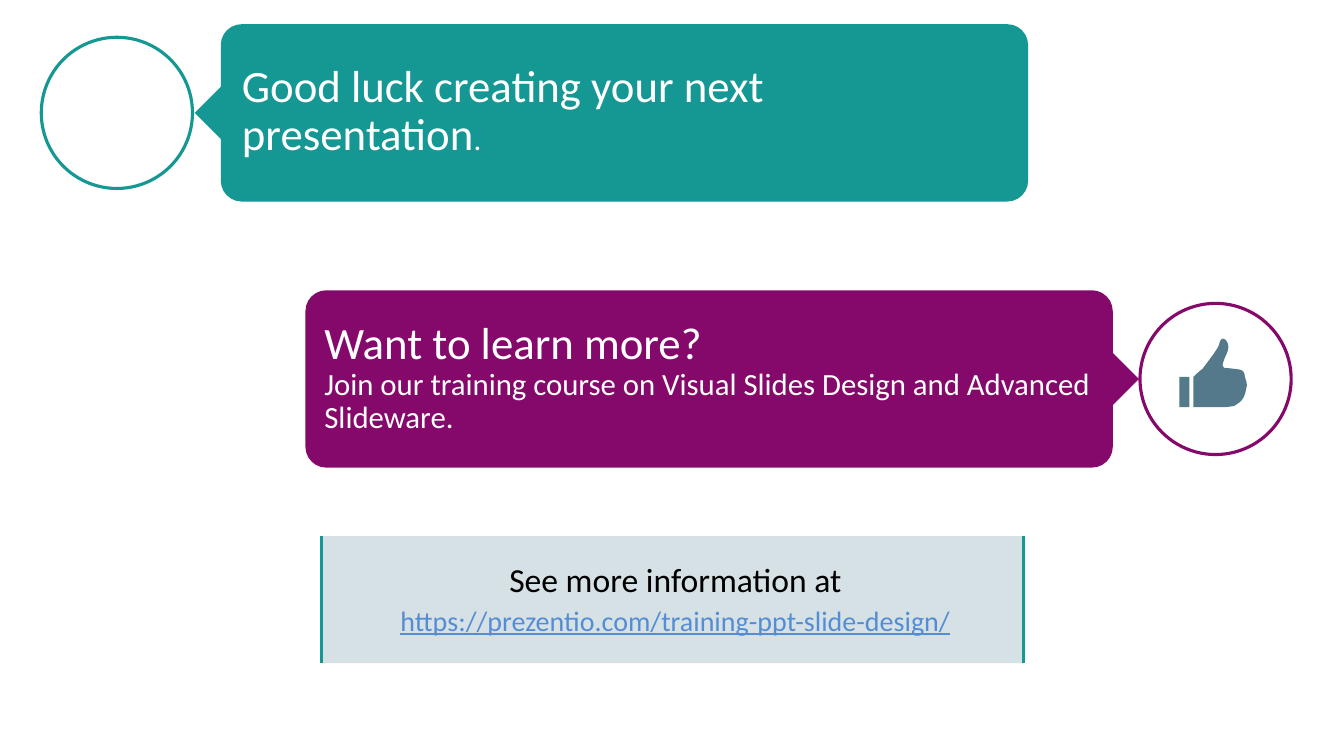
from pptx import Presentation
from pptx.dml.color import RGBColor
from pptx.enum.shapes import MSO_SHAPE
from pptx.enum.text import MSO_ANCHOR, MSO_AUTO_SIZE, PP_ALIGN
from pptx.util import Pt

PX = 9144  # EMU in one px, 100 px to the inch
FONT = "Calibri"
TEAL, PURPLE, WHITE = "159794", "85096A", "FFFFFF"
PANEL, SLATE, BLACK, LINK = "D6E1E6", "54798A", "000000", "548DD4"

ROUNDED, TRIANGLE = MSO_SHAPE.ROUNDED_RECTANGLE, MSO_SHAPE.RIGHT_TRIANGLE
CIRCLE, BRACKETS = MSO_SHAPE.OVAL, MSO_SHAPE.DOUBLE_BRACKET
MIDDLE, NO_FIT = MSO_ANCHOR.MIDDLE, MSO_AUTO_SIZE.NONE
LEFT, CENTER = PP_ALIGN.LEFT, PP_ALIGN.CENTER

# Content: paragraphs are lists of (text, size, colour) runs
GOOD_LUCK = [[("Good luck creating your next presentation", 32, WHITE), (".", 22, WHITE)]]
LEARN_MORE = [
    [("Want to learn more?", 32, WHITE)],
    [("Join our training course on Visual Slides Design and Advanced Slideware.", 22, WHITE)],
]
MORE_INFORMATION = [
    [("See more information at", 24, BLACK)],
    [("https://prezentio.com/training-ppt-slide-design/", 20, LINK)],
]

# Bubbles: colour, left, top, circle left, pointer centre, pointer rotation
TOP_BUBBLE = (TEAL, 219, 24, 41, 220, 45)
LOWER_BUBBLE = (PURPLE, 303, 288, 1131, 1103, 225)
BUBBLE_WIDTH, BUBBLE_HEIGHT = 801, 176
CIRCLE_SIZE, POINTER_SIZE = 150, 38
TEXT_WIDTH, TEXT_HEIGHT = 780, 172

# Thumb icon: each step holds one point for a line or three for a curve
CUFF = [[(1180, 404)], [(1170, 404)], [(1170, 374)], [(1180, 374)]]
HAND = [
    [(1235, 374)],
    [(1235, 371), (1234, 368), (1231, 367)],
    [(1228, 366), (1215, 365), (1215, 365)],
    [(1214, 365), (1213, 363), (1213, 362)],
    [(1213, 361), (1214, 357), (1217, 351)],
    [(1221, 343), (1217, 336), (1213, 336)],
    [(1210, 337), (1210, 341), (1209, 343)],
    [(1209, 345), (1196, 362), (1193, 366)],
    [(1190, 368), (1186, 372), (1184, 374)],
    [(1184, 404)],
    [(1215, 404)],
    [(1224, 403), (1225, 403), (1227, 401)],
    [(1231, 399), (1234, 395), (1235, 391)],
    [(1236, 389), (1236, 386), (1237, 383)],
    [(1237, 379), (1236, 377), (1235, 374)],
]


def color(value):
    return RGBColor.from_string(value)


def paint(shape, fill, line=None):
    shape.shadow.inherit = False
    shape.fill.solid()
    shape.fill.fore_color.rgb = color(fill)
    if line:
        shape.line.color.rgb = color(line)
        shape.line.width = Pt(2.25)
    else:
        shape.line.fill.background()


def add_shape(kind, left, top, width, height, fill, line=None):
    shape = slide.shapes.add_shape(kind, left * PX, top * PX, width * PX, height * PX)
    paint(shape, fill, line)
    return shape


def write(text_frame, paragraphs, alignment=LEFT, line_spacing=None):
    text_frame.word_wrap = True
    text_frame.auto_size = NO_FIT
    text_frame.vertical_anchor = MIDDLE
    for index, runs in enumerate(paragraphs):
        paragraph = text_frame.add_paragraph() if index else text_frame.paragraphs[0]
        paragraph.alignment = alignment
        paragraph.line_spacing = line_spacing
        for text, size, text_color in runs:
            run = paragraph.add_run()
            run.text = text
            run.font.name = FONT
            run.font.size = Pt(size)
            run.font.color.rgb = color(text_color)
            run.font.underline = text_color == LINK


def add_bubble(fill, left, top, circle_left, pointer_center, rotation):
    middle = top + BUBBLE_HEIGHT // 2
    body = add_shape(ROUNDED, left, top, BUBBLE_WIDTH, BUBBLE_HEIGHT, fill)
    body.adjustments[0] = 0.118
    half = POINTER_SIZE // 2
    pointer = add_shape(TRIANGLE, pointer_center - half, middle - half,
                        POINTER_SIZE, POINTER_SIZE, fill)
    pointer.rotation = rotation
    add_shape(CIRCLE, circle_left, middle - CIRCLE_SIZE // 2,
              CIRCLE_SIZE, CIRCLE_SIZE, WHITE, fill)


def outline(steps, pieces=8):
    """Turn lines and cubic curves into a list of EMU points."""
    points = []
    for step in steps:
        if len(step) == 1:
            points.append(step[0])
            continue
        start, (first, second, end) = points[-1], step
        for piece in range(1, pieces + 1):
            t = piece / pieces
            u = 1 - t
            points.append(tuple(
                u**3 * a + 3 * u * u * t * b + 3 * u * t * t * c + t**3 * d
                for a, b, c, d in zip(start, first, second, end)))
    return [(round(x * PX), round(y * PX)) for x, y in points]


presentation = Presentation()
presentation.slide_width, presentation.slide_height = 12192000, 750 * PX
slide = presentation.slides.add_slide(presentation.slide_layouts[5])

# Top bubble, with the title in front of it
add_bubble(*TOP_BUBBLE)
title = slide.shapes.title
title.left, title.top = 230 * PX, 25 * PX
title.width, title.height = TEXT_WIDTH * PX, TEXT_HEIGHT * PX
write(title.text_frame, GOOD_LUCK, line_spacing=0.9)
slide.shapes._spTree.append(title._element)

# Information panel
panel = add_shape(BRACKETS, 319, 532, 696, 126, PANEL, TEAL)
panel.adjustments[0] = 0
panel.text_frame.margin_top, panel.text_frame.margin_bottom = 12 * PX, 16 * PX
write(panel.text_frame, MORE_INFORMATION, CENTER)
for paragraph in panel.text_frame.paragraphs:
    paragraph.space_after = Pt(3)
    paragraph._p.get_or_add_pPr().set("marL", str(6 * PX))

# Lower bubble and its text
add_bubble(*LOWER_BUBBLE)
learn_box = slide.shapes.add_textbox(312 * PX, 289 * PX, TEXT_WIDTH * PX, TEXT_HEIGHT * PX)
write(learn_box.text_frame, LEARN_MORE, line_spacing=0.9)

# Thumb icon
cuff, hand = outline(CUFF), outline(HAND)
builder = slide.shapes.build_freeform(*cuff[0], scale=1.0)
builder.add_line_segments(cuff[1:], close=True)
builder.move_to(*hand[0])
builder.add_line_segments(hand[1:], close=True)
paint(builder.convert_to_shape(), SLATE)

presentation.save("out.pptx")
